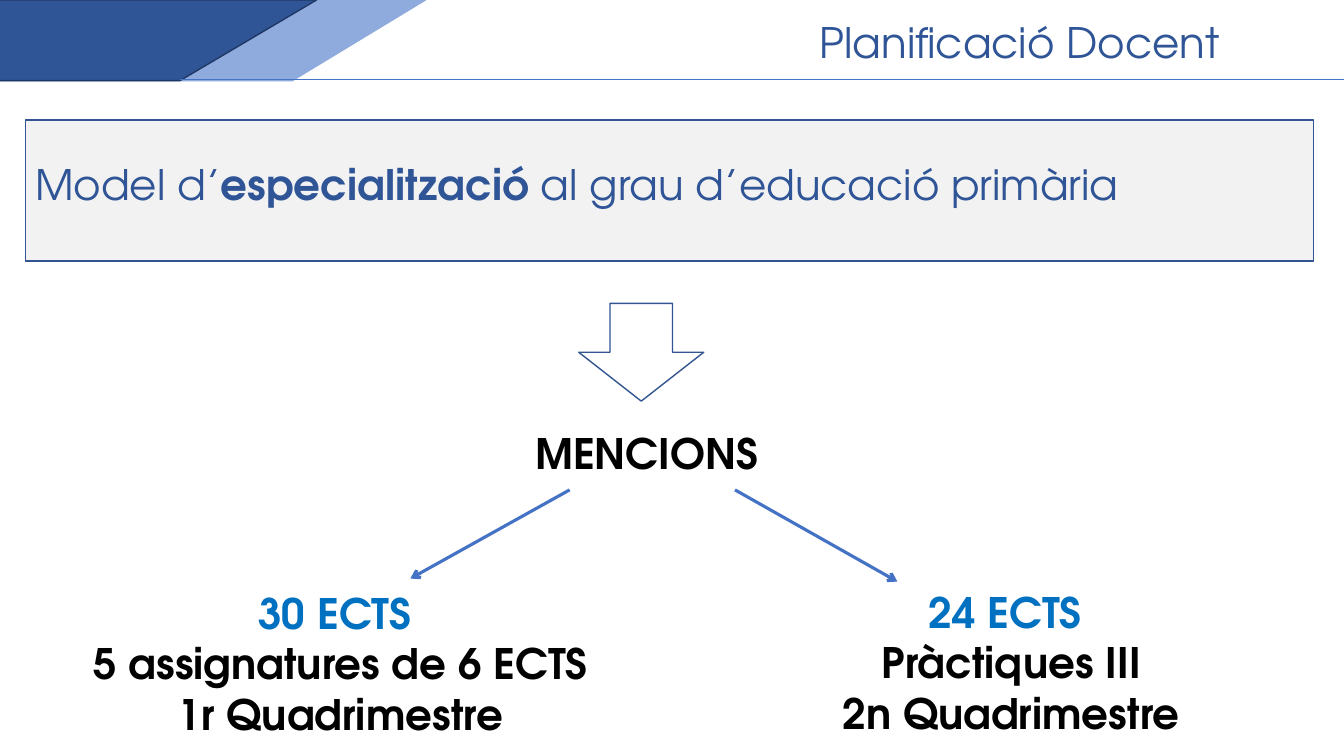
from dataclasses import dataclass

from lxml import etree
from pptx import Presentation
from pptx.dml.color import RGBColor
from pptx.enum.shapes import MSO_CONNECTOR, MSO_SHAPE
from pptx.enum.text import MSO_AUTO_SIZE, PP_ALIGN
from pptx.oxml.ns import qn
from pptx.util import Inches, Pt


@dataclass(frozen=True)
class Theme:
    font: str = "TeX Gyre Adventor"
    size: float = 30
    outline: float = 1
    rule: float = 0.5
    arrow: float = 2.25
    navy: str = "2F5597"
    navy_edge: str = "203864"
    light_blue: str = "8FAADC"
    edge: str = "325491"
    line: str = "4472C4"
    accent: str = "0070C0"
    panel: str = "F2F2F2"
    white: str = "FFFFFF"
    black: str = "000000"


THEME = Theme()


def rgb(value):
    return RGBColor.from_string(value)


def add_box(slide, kind, box, fill, line):
    sp = slide.shapes.add_shape(kind, *map(Inches, box))
    sp.shadow.inherit = False
    sp.fill.solid()
    sp.fill.fore_color.rgb = rgb(fill)
    sp.line.color.rgb = rgb(line)
    sp.line.width = Pt(THEME.outline)
    return sp


def add_line(slide, start, end, width, arrow=False):
    cxn = slide.shapes.add_connector(
        MSO_CONNECTOR.STRAIGHT, *map(Inches, (*start, *end)))
    cxn.line.color.rgb = rgb(THEME.line)
    cxn.line.width = Pt(width)
    if arrow:
        etree.SubElement(cxn.line._get_or_add_ln(), qn("a:tailEnd"), type="arrow")
    etree.SubElement(cxn._element.spPr, qn("a:effectLst"))
    return cxn


def add_text(slide, box, paragraphs, align=PP_ALIGN.LEFT, wrap=True):
    """Each paragraph is a list of (text, colour, bold) runs."""
    tf = slide.shapes.add_textbox(*map(Inches, box)).text_frame
    tf.word_wrap = wrap
    tf.auto_size = MSO_AUTO_SIZE.SHAPE_TO_FIT_TEXT
    for i, runs in enumerate(paragraphs):
        p = tf.paragraphs[0] if i == 0 else tf.add_paragraph()
        p.alignment = align
        for text, color, bold in runs:
            r = p.add_run()
            r.text = text
            r.font.name = THEME.font
            r.font.size = Pt(THEME.size)
            r.font.bold = bold
            r.font.color.rgb = rgb(color)


def add_header(slide, box, title):
    x, y, w, h = box
    # Slanted bands bleed past the left edge
    for left, width, fill, line in (
            (-2.38, 6.6, THEME.light_blue, THEME.light_blue),
            (-3.63, 6.77, THEME.navy, THEME.navy_edge)):
        add_box(slide, MSO_SHAPE.FLOWCHART_DATA, (x + left, y, width, h), fill, line)
    add_line(slide, (x + 1.79, y + h - 0.01), (x + w, y + h - 0.01), THEME.rule)
    add_text(slide, (x + 8.03, y + 0.11, 4.22, 0.61),
             [[(title, THEME.navy, False)]], PP_ALIGN.JUSTIFY, wrap=False)


def add_model_panel(slide, box, runs):
    x, y, w, h = box
    add_box(slide, MSO_SHAPE.RECTANGLE, box, THEME.panel, THEME.edge)
    add_text(slide, (x, y + 0.33, 11.06, 0.61),
             [[(text, THEME.navy, bold) for text, bold in runs]], wrap=False)


def add_mentions(slide, box, label):
    x, y, w, h = box
    add_box(slide, MSO_SHAPE.DOWN_ARROW, (x + 0.53, y, 1.24, 0.97),
            THEME.white, THEME.edge)
    add_text(slide, (x, y + 1.18, w, h - 1.18), [[(label, THEME.black, True)]])
    # Arrows to the two branches
    for start, end in (((0.44, 1.85), (-1.14, 2.73)),
                       ((2.08, 1.85), (3.69, 2.76))):
        add_line(slide, (x + start[0], y + start[1]), (x + end[0], y + end[1]),
                 THEME.arrow, arrow=True)


def add_branch(slide, box, credits, details):
    add_text(slide, box,
             [[(credits, THEME.accent, True)]]
             + [[(text, THEME.black, True)] for text in details],
             PP_ALIGN.CENTER)


def main():
    prs = Presentation()
    prs.slide_width, prs.slide_height = Inches(13.33), Inches(7.5)
    slide = prs.slides.add_slide(prs.slide_layouts[6])

    add_model_panel(slide, (0.25, 1.19, 12.78, 1.4), [
        ("Model d’", False),
        ("especialització", True),
        (" al grau d’educació primària", False)])
    add_header(slide, (0, 0, 13.33, 0.8), "Planificació Docent")
    add_mentions(slide, (5.21, 3.01, 2.51, 2.29), "MENCIONS")
    add_branch(slide, (0.75, 5.78, 5.26, 1.62), "30 ECTS ",
               ["5 assignatures de 6 ECTS", "1r Quadrimestre"])
    add_branch(slide, (7.4, 5.77, 5.26, 1.62), "24 ECTS ",
               ["Pràctiques III", "2n Quadrimestre"])

    prs.save("out.pptx")


if __name__ == "__main__":
    main()
